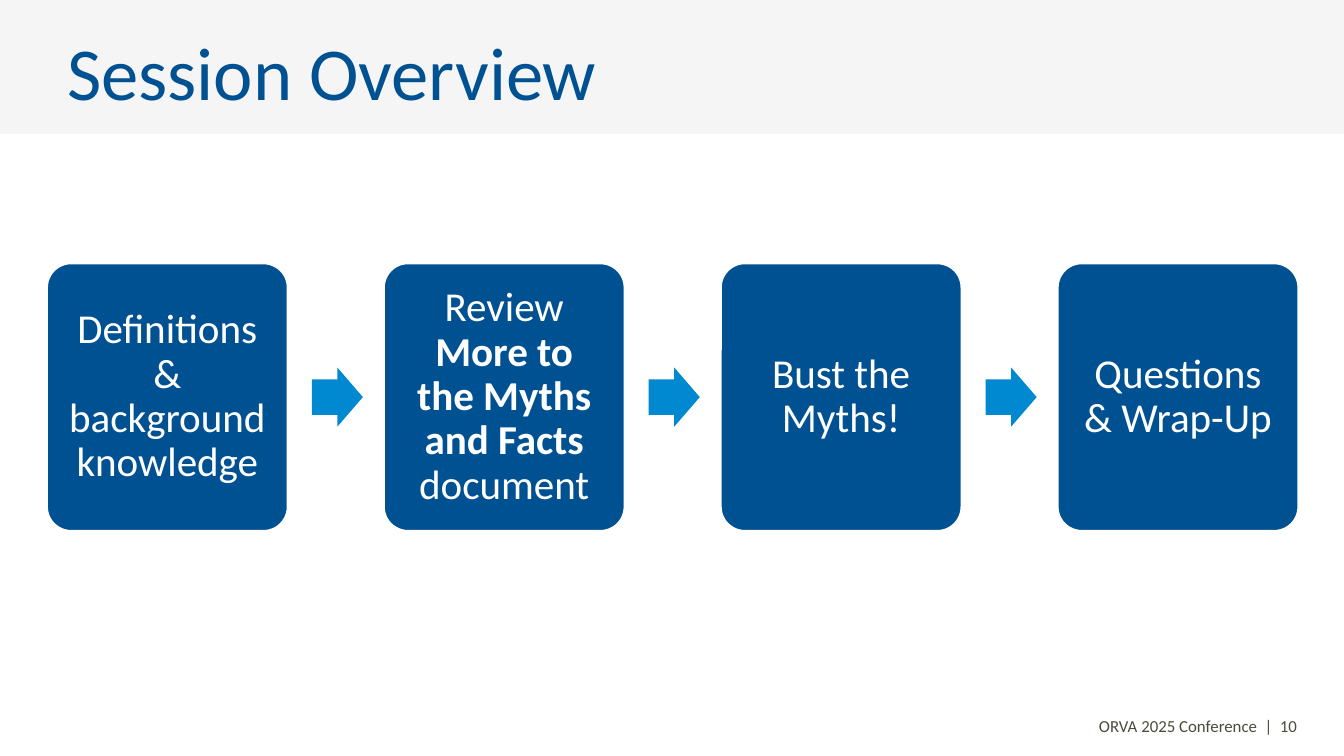
from pptx import Presentation
from pptx.dml.color import RGBColor
from pptx.enum.shapes import MSO_SHAPE
from pptx.enum.text import MSO_ANCHOR, MSO_AUTO_SIZE, PP_ALIGN
from pptx.util import Inches, Pt

RECTANGLE, CARD, ARROW = MSO_SHAPE.RECTANGLE, MSO_SHAPE.ROUNDED_RECTANGLE, MSO_SHAPE.RIGHT_ARROW
MIDDLE, NO_FIT = MSO_ANCHOR.MIDDLE, MSO_AUTO_SIZE.NONE
LEFT, CENTER, RIGHT = PP_ALIGN.LEFT, PP_ALIGN.CENTER, PP_ALIGN.RIGHT

FONT = "Calibri"
TITLE_LAYOUT = 5
COLORS = {
    "navy": "005192",
    "blue": "0089D0",
    "white": "FFFFFF",
    "footer": "4B4B3B",
    "band_start": "F5F5F5",
    "band_end": "F3F3F3",
}
STEPS = [
    [("Definitions & background knowledge", False)],
    [("Review ", False), ("More to the Myths and Facts ", True), ("document", False)],
    [("Bust the Myths!", False)],
    [("Questions & Wrap-Up", False)],
]


def color(name):
    """Return the named colour."""
    return RGBColor.from_string(COLORS[name])


def write(shape, spans, size, ink, align, insets, line_spacing=1.0):
    """Write one paragraph of (text, bold) spans into a shape."""
    frame = shape.text_frame
    frame.auto_size = NO_FIT
    frame.word_wrap = True
    frame.vertical_anchor = MIDDLE
    frame.margin_left, frame.margin_top, frame.margin_right, frame.margin_bottom = map(Inches, insets)
    para = frame.paragraphs[0]
    para.alignment = align
    para.line_spacing = line_spacing
    for text, bold in spans:
        span = para.add_run()
        span.text = text
        span.font.name = FONT
        span.font.size = Pt(size)
        span.font.bold = bold
        span.font.color.rgb = color(ink)


def add_block(page, kind, left, top, width, height, fill):
    """Add a flat preset shape without an outline."""
    block = page.shapes.add_shape(kind, Inches(left), Inches(top), Inches(width), Inches(height))
    block.shadow.inherit = False
    block.line.fill.background()
    block.fill.solid()
    block.fill.fore_color.rgb = color(fill)
    return block


def add_header(page, left, top, width, height):
    """Place the shaded band and the title in front of it."""
    band = add_block(page, RECTANGLE, left, top, width, height, "band_start")
    band.fill.gradient()
    band.fill.gradient_angle = 315
    for stop, name in zip(band.fill.gradient_stops, ("band_start", "band_end")):
        stop.color.rgb = color(name)
    title = page.shapes.title
    title.element.addprevious(band.element)
    title.left, title.top = Inches(left + 0.5), Inches(top + 0.22)
    title.width, title.height = Inches(7.98), Inches(0.7)
    write(title, [("Session Overview", False)], 40, "navy", LEFT, (0, 0, 0, 0), 0.9)


def add_process(page, left, top, width, height, steps):
    """Spread step cards evenly over the box, with an arrow in each gap."""
    card_width, arrow_width, arrow_height = 1.79, 0.38, 0.44
    pitch = (width - card_width) / (len(steps) - 1)
    for index, spans in enumerate(steps):
        card_left = left + index * pitch
        card = add_block(page, CARD, card_left, top, card_width, height, "navy")
        card.adjustments[0] = 0.1
        card.line.color.rgb = color("white")
        card.line.width = Pt(1)
        write(card, spans, 22, "white", CENTER, (0.09,) * 4, 0.9)
        if index < len(steps) - 1:
            arrow_top = top + (height - arrow_height) / 2
            arrow = add_block(page, ARROW, card_left + card_width + 0.18, arrow_top,
                              arrow_width, arrow_height, "blue")
            arrow.adjustments[0] = 0.6
            arrow.adjustments[1] = 0.5


def add_footer(page, left, top, width, height):
    """Place the conference name and page number."""
    footer = page.shapes.add_textbox(Inches(left), Inches(top), Inches(width), Inches(height))
    write(footer, [("ORVA 2025 Conference  |  10", False)], 9, "footer", RIGHT, (0.1, 0.05, 0, 0.05))


def main():
    """Build and save the session overview slide."""
    deck = Presentation()
    deck.slide_width, deck.slide_height = Inches(10), Inches(10) * 9 // 16
    page = deck.slides.add_slide(deck.slide_layouts[TITLE_LAYOUT])
    page.background.fill.solid()
    page.background.fill.fore_color.rgb = color("white")
    add_header(page, 0, 0, 10, 1)
    add_process(page, 0.35, 1.96, 9.31, 1.99, STEPS)
    add_footer(page, 7.4, 5.25, 2.25, 0.3)
    deck.save("out.pptx")


if __name__ == "__main__":
    main()
